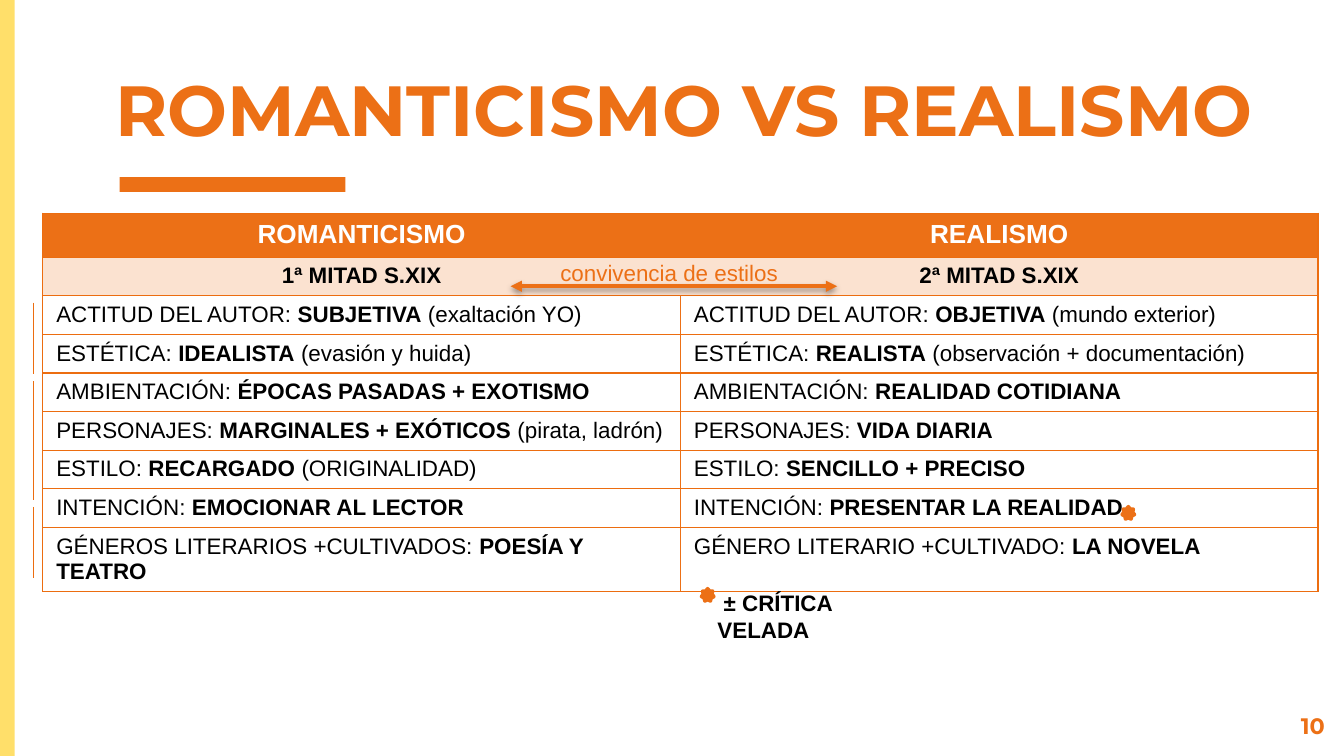
from typing import NamedTuple

from lxml import etree
from pptx import Presentation
from pptx.dml.color import RGBColor
from pptx.enum.shapes import MSO_CONNECTOR, MSO_SHAPE
from pptx.enum.text import MSO_ANCHOR, MSO_AUTO_SIZE, PP_ALIGN
from pptx.oxml.ns import qn
from pptx.util import Cm, Pt

ORANGE = RGBColor(0xEC, 0x70, 0x16)
RULE = RGBColor(0xEC, 0x6D, 0x10)
YELLOW = RGBColor(0xFF, 0xDF, 0x6A)
PEACH = RGBColor(0xFB, 0xE2, 0xD0)
WHITE = RGBColor(0xFF, 0xFF, 0xFF)
BLACK = RGBColor(0, 0, 0)
LEFT, CENTER, RIGHT = PP_ALIGN.LEFT, PP_ALIGN.CENTER, PP_ALIGN.RIGHT
RECTANGLE, STAR = MSO_SHAPE.RECTANGLE, MSO_SHAPE.STAR_7_POINT
STRAIGHT = MSO_CONNECTOR.STRAIGHT
TITLE_ONLY = 5

HEADER_HEIGHT, ROW_HEIGHT, LAST_HEIGHT = 0.83, 0.73, 1.18
COLUMN_WIDTH = 12.05
CELL_TOP, CELL_BOTTOM = 0.12, 0.07
THIN, MIDDLE = 0.75, 1


class Trait(NamedTuple):
    """One table cell: plain label, bold key idea, plain remark."""
    label: str
    key: str
    remark: str = ""


class Box(NamedTuple):
    left: float
    top: float
    width: float
    height: float

    def lengths(self) -> list:
        return [Cm(value) for value in self]


class Span(NamedTuple):
    start: float
    end: float


HEADINGS = ("ROMANTICISMO", "REALISMO")
PERIODS = ("1ª MITAD S.XIX", "2ª MITAD S.XIX")
TRAITS = [
    (Trait("ACTITUD DEL AUTOR: ", "SUBJETIVA", " (exaltación YO)"),
     Trait("ACTITUD DEL AUTOR: ", "OBJETIVA", " (mundo exterior)")),
    (Trait("ESTÉTICA: ", "IDEALISTA", " (evasión y huida)"),
     Trait("ESTÉTICA: ", "REALISTA", " (observación + documentación)")),
    (Trait("AMBIENTACIÓN: ", "ÉPOCAS PASADAS + EXOTISMO"),
     Trait("AMBIENTACIÓN: ", "REALIDAD COTIDIANA")),
    (Trait("PERSONAJES: ", "MARGINALES + EXÓTICOS", " (pirata, ladrón)"),
     Trait("PERSONAJES: ", "VIDA DIARIA")),
    (Trait("ESTILO: ", "RECARGADO ", "(ORIGINALIDAD)"),
     Trait("ESTILO: ", "SENCILLO + PRECISO")),
    (Trait("INTENCIÓN: ", "EMOCIONAR AL LECTOR"),
     Trait("INTENCIÓN: ", "PRESENTAR LA REALIDAD")),
    (Trait("GÉNEROS LITERARIOS +CULTIVADOS: ", "POESÍA Y TEATRO"),
     Trait("GÉNERO LITERARIO +CULTIVADO: ", "LA NOVELA")),
]
GROUP_MARKS = [Span(5.72, 7.06), Span(7.21, 9.45), Span(9.58, 10.92)]
STARS = [Box(21.21, 9.58, 0.23, 0.23), Box(13.26, 11.13, 0.23, 0.23)]


def write(frame, text: str, *, size: float = 12, color: RGBColor = BLACK,
          font: str = "Arial", bold: bool = False, align=LEFT) -> None:
    """Append a formatted run to the first paragraph."""
    paragraph = frame.paragraphs[0]
    paragraph.alignment = align
    run = paragraph.add_run()
    run.text = text
    run.font.size, run.font.name, run.font.bold = Pt(size), font, bold
    run.font.color.rgb = color


def set_insets(frame, horizontal: float, vertical: float) -> None:
    frame.margin_left = frame.margin_right = Cm(horizontal)
    frame.margin_top = frame.margin_bottom = Cm(vertical)


def add_label(slide, box: Box, text: str, **text_format):
    frame = slide.shapes.add_textbox(*box.lengths()).text_frame
    frame.word_wrap = True
    write(frame, text, **text_format)
    return frame


def add_block(slide, kind, box: Box, color: RGBColor, outline: float = 0) -> None:
    shape = slide.shapes.add_shape(kind, *box.lengths())
    shape.shadow.inherit = False
    shape.fill.solid()
    shape.fill.fore_color.rgb = color
    if outline:
        shape.line.color.rgb = color
        shape.line.width = Pt(outline)
    else:
        shape.line.fill.background()


def add_line(slide, start: tuple, end: tuple, color: RGBColor, width: float):
    """Draw a straight line; return it with its empty effect list."""
    line = slide.shapes.add_connector(STRAIGHT, *(Cm(v) for v in start + end))
    line.line.color.rgb = color
    line.line.width = Pt(width)
    effects = etree.SubElement(line._element.spPr, qn("a:effectLst"))
    return line, effects


def add_coexistence_arrow(slide) -> None:
    arrow, effects = add_line(slide, (9.65, 5.41), (15.82, 5.41), ORANGE, 2)
    outline = arrow.line._get_or_add_ln()
    for end in ("a:headEnd", "a:tailEnd"):
        etree.SubElement(outline, qn(end), type="triangle")
    shadow = etree.SubElement(
        effects, qn("a:outerShdw"), blurRad=str(Pt(3.1)), dist=str(Pt(1.6)),
        dir="5400000", rotWithShape="0")
    shade = etree.SubElement(shadow, qn("a:srgbClr"), val=str(BLACK))
    etree.SubElement(shade, qn("a:alpha"), val="38000")


def set_borders(cell, left: float, right: float) -> None:
    """Draw the cell's edges; a side of width 0 stays open."""
    properties = cell._tc.get_or_add_tcPr()
    for side, width in (("L", left), ("R", right), ("T", THIN), ("B", THIN)):
        edge = etree.SubElement(properties, qn(f"a:ln{side}"), w=str(Pt(width)))
        if width:
            fill = etree.SubElement(edge, qn("a:solidFill"))
            color = ORANGE if width == MIDDLE else RULE
            etree.SubElement(fill, qn("a:srgbClr"), val=str(color))
        else:
            etree.SubElement(edge, qn("a:noFill"))


def style_cell(cell, column: int, middle: float, fill: RGBColor) -> None:
    left, right = (THIN, middle) if column == 0 else (middle, THIN)
    set_borders(cell, left, right)
    cell.margin_top, cell.margin_bottom = Cm(CELL_TOP), Cm(CELL_BOTTOM)
    cell.fill.solid()
    cell.fill.fore_color.rgb = fill


def add_comparison(slide) -> None:
    heights = [HEADER_HEIGHT] + [ROW_HEIGHT] * len(TRAITS) + [LAST_HEIGHT]
    box = Box(0.81, 4.03, 2 * COLUMN_WIDTH, sum(heights))
    table = slide.shapes.add_table(len(heights), 2, *box.lengths()).table
    table.first_row = table.horz_banding = False
    for row, height in zip(table.rows, heights):
        row.height = Cm(height)
    for column in range(2):
        table.columns[column].width = Cm(COLUMN_WIDTH)
        heading, period = table.cell(0, column), table.cell(1, column)
        style_cell(heading, column, 0, ORANGE)
        write(heading.text_frame, HEADINGS[column], size=14, color=WHITE,
              bold=True, align=CENTER)
        style_cell(period, column, 0, PEACH)
        write(period.text_frame, PERIODS[column], bold=True, align=CENTER)
        for row, traits in enumerate(TRAITS, start=2):
            cell = table.cell(row, column)
            style_cell(cell, column, MIDDLE, WHITE)
            for text, bold in zip(traits[column], (False, True, False)):
                if text:
                    write(cell.text_frame, text, bold=bold)


def add_title(slide) -> None:
    title = slide.shapes.title
    title.left, title.top, title.width, title.height = Box(
        1.93, 0.58, 22.78, 2.51).lengths()
    frame = title.text_frame
    frame.auto_size = MSO_AUTO_SIZE.NONE
    frame.vertical_anchor = MSO_ANCHOR.BOTTOM
    set_insets(frame, 0.25, 0.25)
    write(frame, "ROMANTICISMO VS REALISMO", size=38, color=ORANGE,
          font="Montserrat", bold=True)


def main() -> None:
    deck = Presentation()
    deck.slide_width, deck.slide_height = Cm(25.4), Cm(14.29)
    slide = deck.slides.add_slide(deck.slide_layouts[TITLE_ONLY])

    add_block(slide, RECTANGLE, Box(0, 0, 0.28, 14.29), YELLOW)
    add_block(slide, RECTANGLE, Box(2.26, 3.35, 4.27, 0.28), ORANGE)
    add_title(slide)
    page_number = add_label(slide, Box(23.77, 13.21, 1.52, 0.86), "10",
                            color=ORANGE, font="Montserrat", bold=True, align=RIGHT)
    set_insets(page_number, 0.25, 0.25)

    add_comparison(slide)
    add_coexistence_arrow(slide)
    add_label(slide, Box(10.34, 4.78, 4.78, 0.76), "convivencia de estilos",
              color=ORANGE)
    for mark in GROUP_MARKS:
        add_line(slide, (0.63, mark.start), (0.63, mark.end), RULE, THIN)
    for star in STARS:
        add_block(slide, STAR, star, ORANGE, outline=2)
    footnote = add_label(slide, Box(13.31, 11.02, 4.52, 0.76),
                         " ± CRÍTICA VELADA", bold=True)
    footnote.margin_right = Cm(1.5)
    deck.save("out.pptx")


if __name__ == "__main__":
    main()
